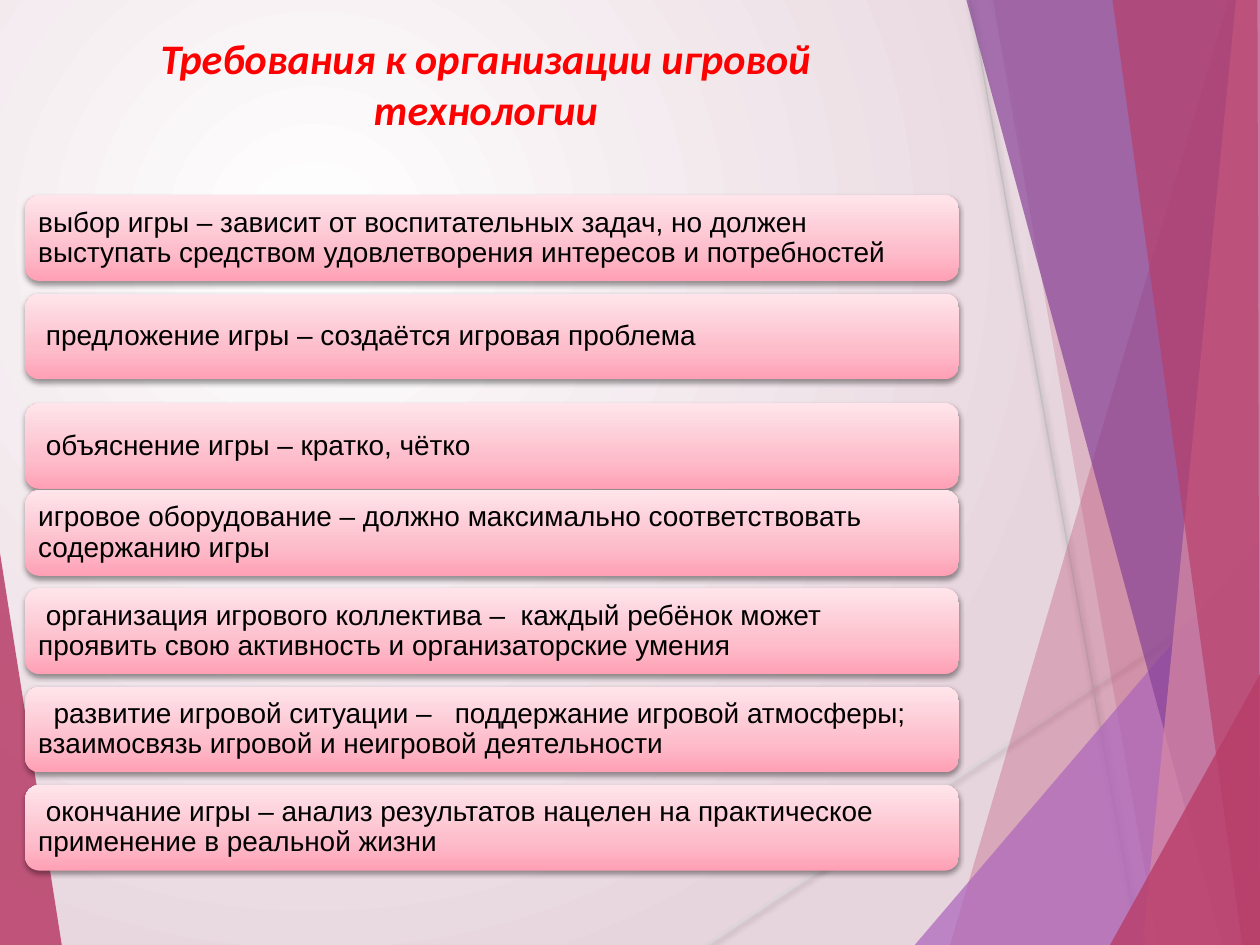
from pptx import Presentation
from pptx.dml.color import RGBColor
from pptx.enum.shapes import MSO_CONNECTOR, MSO_SHAPE
from pptx.enum.text import MSO_ANCHOR, PP_ALIGN
from pptx.oxml import parse_xml
from pptx.oxml.ns import nsdecls, qn
from pptx.util import Inches, Pt

ROUND = MSO_SHAPE.ROUNDED_RECTANGLE
LINE = MSO_CONNECTOR.STRAIGHT
MIDDLE = MSO_ANCHOR.MIDDLE
TOP = MSO_ANCHOR.TOP
LEFT = PP_ALIGN.LEFT
CENTER = PP_ALIGN.CENTER

ROSE = "B83D68"
STEPS = [
    "выбор игры – зависит от воспитательных задач, но должен выступать средством удовлетворения интересов и потребностей",
    " предложение игры – создаётся игровая проблема",
    " объяснение игры – кратко, чётко",
    "игровое оборудование – должно максимально соответствовать содержанию игры",
    " организация игрового коллектива –  каждый ребёнок может проявить свою активность и организаторские умения",
    "  развитие игровой ситуации –   поддержание игровой атмосферы; взаимосвязь игровой и неигровой деятельности",
    " окончание игры – анализ результатов нацелен на практическое применение в реальной жизни",
]
RAYS = [
    (5.61, 7.5, 10, 4.57, "D9D9D9"),
    (7.7, 0, 9.04, 7.5, "BFBFBF"),
]
SHARDS = [
    ([(9.75, 0), (7.54, 7.5), (10, 7.5), (10, 0)], ROSE, 30),
    ([(7.88, 0), (9.19, 7.5), (10, 7.5), (10, 0)], ROSE, 20),
    ([(7.26, 7.5), (10, 4.29), (10, 7.5)], "AC66BB", 72),
    ([(7.67, 0), (9.7, 7.5), (10, 7.5), (10, 0)], "874396", 70),
    ([(9.81, 0), (9.07, 7.5), (10, 7.5), (10, 0)], "D788A3", 70),
    ([(8.83, 0), (9.86, 7.5), (10, 7.5), (9.98, 0)], ROSE, 65),
    ([(8.81, 7.5), (10, 5.35), (10, 7.5)], ROSE, 80),
]


def color(code):
    return RGBColor.from_string(code)


def blend(root, stops, tail):
    marks = "".join(
        f'<a:gs pos="{pos * 1000}"><a:srgbClr val="{code}"/></a:gs>'
        for pos, code in stops
    )
    old = next(root.iter(qn("a:gradFill")))
    new = parse_xml(
        f'<a:gradFill {nsdecls("a")} rotWithShape="1">'
        f"<a:gsLst>{marks}</a:gsLst>{tail}</a:gradFill>"
    )
    old.getparent().replace(old, new)


def shade(item):
    item._element.spPr.append(parse_xml(
        f'<a:effectLst {nsdecls("a")}><a:outerShdw blurRad="40000" '
        'dist="20000" dir="5400000" rotWithShape="0"><a:srgbClr val="000000">'
        '<a:alpha val="38000"/></a:srgbClr></a:outerShdw></a:effectLst>'
    ))


class Deck:
    font = "Arial"
    size = 16
    inset = 0.07

    def __init__(self, wide, high):
        self.file = Presentation()
        self.file.slide_width = Inches(wide)
        self.file.slide_height = Inches(high)
        self.slide = self.file.slides.add_slide(self.file.slide_layouts[6])
        self.shapes = self.slide.shapes

    def back(self, stops):
        self.slide.background.fill.gradient()
        blend(
            self.slide._element, stops,
            '<a:path path="circle"><a:fillToRect l="50000" t="50000" '
            'r="100000" b="100000"/></a:path>',
        )

    def shard(self, points, code, alpha):
        spots = [(Inches(x), Inches(y)) for x, y in points]
        pen = self.shapes.build_freeform(*spots[0])
        pen.add_line_segments(spots[1:], close=True)
        item = pen.convert_to_shape()
        item.shadow.inherit = False
        item.line.fill.background()
        item.fill.solid()
        item.fill.fore_color.rgb = color(code)
        tint = next(item._element.spPr.iter(qn("a:srgbClr")))
        tint.append(parse_xml(
            f'<a:alpha {nsdecls("a")} val="{alpha * 1000}"/>'
        ))

    def ray(self, x1, y1, x2, y2, code):
        item = self.shapes.add_connector(
            LINE, Inches(x1), Inches(y1), Inches(x2), Inches(y2)
        )
        item.line.color.rgb = color(code)
        item.line.width = Pt(0.75)
        shade(item)

    def label(self, item, text, anchor, align):
        frame = item.text_frame
        frame.word_wrap = True
        frame.vertical_anchor = anchor
        para = frame.paragraphs[0]
        para.text = text
        para.alignment = align
        para.font.name = self.font
        para.font.size = Pt(self.size)
        para.font.color.rgb = color("000000")
        return frame, para

    def bar(self, left, top, wide, high, text):
        item = self.shapes.add_shape(
            ROUND, Inches(left), Inches(top), Inches(wide), Inches(high)
        )
        item.line.fill.background()
        item.fill.gradient()
        blend(
            item._element,
            [(0, "FFA0B5"), (35, "FDBDCB"), (100, "FFE5EB")],
            '<a:lin ang="16200000" scaled="0"/>',
        )
        shade(item)
        frame, para = self.label(item, text, MIDDLE, LEFT)
        frame.margin_left = frame.margin_right = Inches(self.inset)
        frame.margin_top = frame.margin_bottom = 0
        para.line_spacing = 0.9

    def title(self, left, top, wide, high, text):
        item = self.shapes.add_textbox(
            Inches(left), Inches(top), Inches(wide), Inches(high)
        )
        para = self.label(item, text, TOP, CENTER)[1]
        para.font.name = "Calibri"
        para.font.size = Pt(24)
        para.font.color.rgb = color("FF0000")
        para.font.bold = para.font.italic = True


def main():
    deck = Deck(10, 7.5)
    deck.back([(0, "FFFFFF"), (100, "E7D5DD")])
    deck.shard([(0, 4.39), (0.49, 7.5), (0, 7.5)], ROSE, 85)
    for ray in RAYS:
        deck.ray(*ray)
    for shard in SHARDS:
        deck.shard(*shard)
    for i, text in enumerate(STEPS):
        drop = 0.09 if i == 2 else 0
        deck.bar(0.2, 1.55 + 0.78 * i + drop, 7.41, 0.68, text)
    deck.title(0.35, 0.21, 7.01, 1.42, "Требования к организации игровой технологии")
    deck.file.save("out.pptx")


if __name__ == "__main__":
    main()
